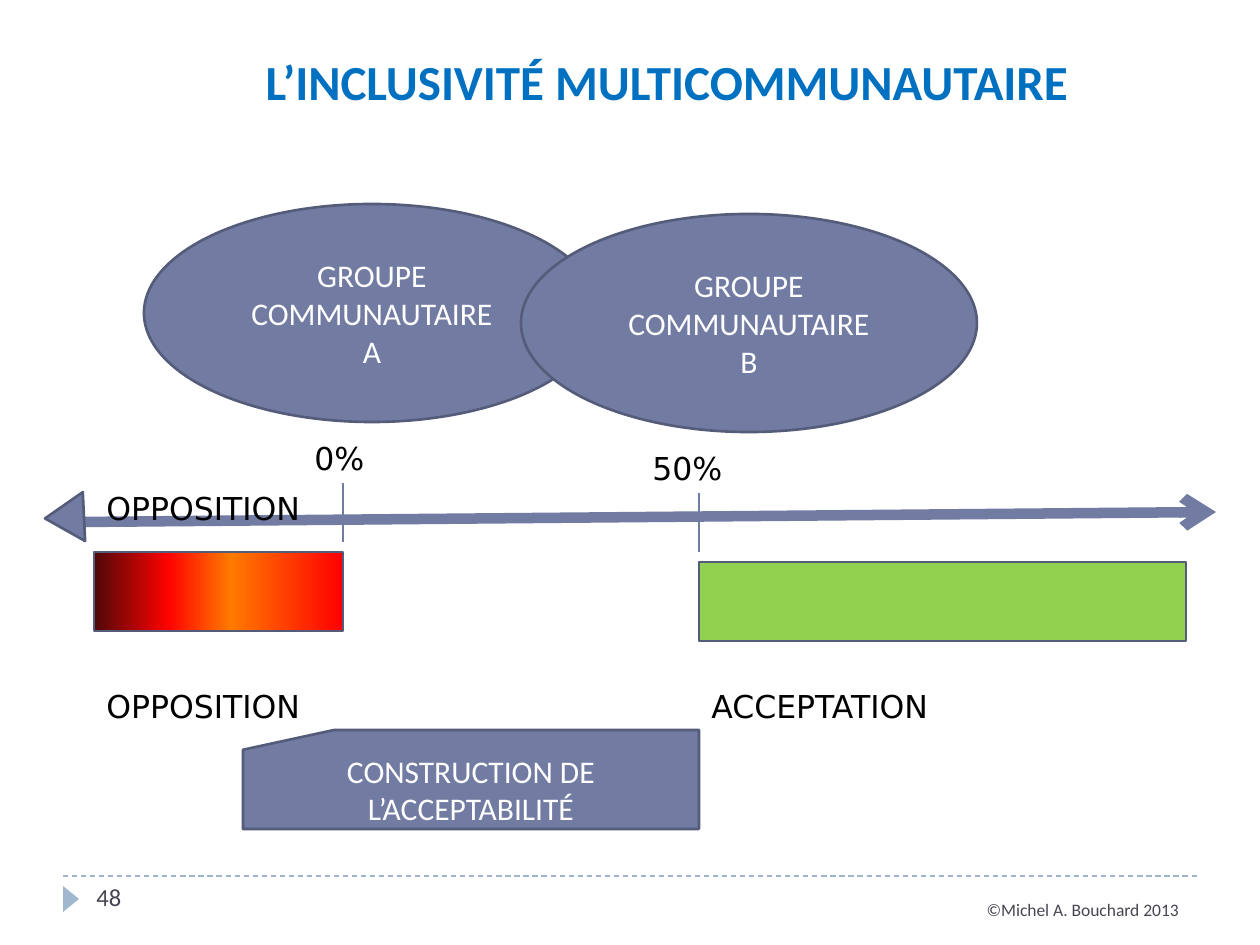
import pptx
import pptx.util
import pptx.dml.color
import pptx.enum.dml
import pptx.enum.shapes
import pptx.enum.text
import pptx.oxml
import pptx.oxml.ns
import lxml.etree

PX = 914400 / 126
BLUE, EDGE, PALE, GREY = "727CA3", "545C79", "9FB8CD", "464653"
SHAPE = pptx.enum.shapes.MSO_SHAPE
ALIGN = pptx.enum.text.PP_ALIGN
ANCHOR = pptx.enum.text.MSO_ANCHOR
qn = pptx.oxml.ns.qn


def px(*lengths):
    return [pptx.util.Emu(round(length * PX)) for length in lengths]


def rgb(colour):
    return pptx.dml.color.RGBColor.from_string(colour)


def write(shape, text, size=18, font="DejaVu Sans", colour="000000", bold=False,
          align=ALIGN.LEFT, anchor=ANCHOR.TOP, wrap=True):
    frame = shape.text_frame
    frame.word_wrap = wrap
    frame.vertical_anchor = anchor
    frame.text = text
    for paragraph in frame.paragraphs:
        paragraph.alignment = align
        paragraph.font.size = pptx.util.Pt(size)
        paragraph.font.name = font
        paragraph.font.bold = bold
        paragraph.font.color.rgb = rgb(colour)


prs = pptx.Presentation()
prs.slide_width, prs.slide_height = px(1260, 945)
slide = prs.slides.add_slide(prs.slide_layouts[5])
shapes = slide.shapes

# Title
title = shapes.title
title.left, title.top, title.width, title.height = px(253, 45, 833, 72)
write(title, "L’INCLUSIVITÉ MULTICOMMUNAUTAIRE", size=28, font="Calibri",
      colour="0070C0", bold=True, wrap=False)

# Footer rule, acceptance axis and its two ticks
for x1, y1, x2, y2, colour, weight, dash, head in [
    (63, 876, 1197, 876, PALE, 0.75, True, False),
    (84, 522, 1216, 512, BLUE, 6, False, True),
    (343, 483, 343, 542, BLUE, 0.75, False, False),
    (699, 493, 699, 552, BLUE, 0.75, False, False),
]:
    rule = shapes.add_connector(pptx.enum.shapes.MSO_CONNECTOR.STRAIGHT, *px(x1, y1, x2, y2))
    rule.line.color.rgb = rgb(colour)
    rule.line.width = pptx.util.Pt(weight)
    if dash:
        rule.line.dash_style = pptx.enum.dml.MSO_LINE.DASH
    if head:
        lxml.etree.SubElement(rule.line._get_or_add_ln(), qn("a:tailEnd"), type="arrow")
    lxml.etree.SubElement(rule._element.spPr, qn("a:effectLst"))

# Shapes: footer marker, left axis head, opposition and acceptance bars, groups, construction
for kind, box, turn, fill, edge, text in [
    (SHAPE.ISOSCELES_TRIANGLE, (58, 891, 26, 16), 90, PALE, None, ""),
    (SHAPE.ISOSCELES_TRIANGLE, (40, 498, 49, 39), 267.3, BLUE, EDGE, ""),
    (SHAPE.RECTANGLE, (94, 552, 249, 79), 0, None, EDGE, ""),
    (SHAPE.RECTANGLE, (699, 562, 487, 79), 0, "92D050", EDGE, ""),
    (SHAPE.OVAL, (144, 204, 456, 218), 0, BLUE, EDGE, "GROUPE COMMUNAUTAIRE\nA"),
    (SHAPE.OVAL, (521, 214, 456, 218), 0, BLUE, EDGE, "GROUPE COMMUNAUTAIRE\nB"),
    (SHAPE.FLOWCHART_CARD, (243, 730, 456, 99), 0, BLUE, EDGE,
     "CONSTRUCTION DE L’ACCEPTABILITÉ"),
]:
    part = shapes.add_shape(kind, *px(*box))
    part.rotation = turn
    part.shadow.inherit = False
    if fill:
        part.fill.solid()
        part.fill.fore_color.rgb = rgb(fill)
    else:
        # The opposition bar runs from dark red through orange to red
        part.fill.gradient()
        part.fill.gradient_angle = 0
        stops = part._element.spPr.find(qn("a:gradFill")).find(qn("a:gsLst"))
        for stop in list(stops):
            stops.remove(stop)
        for percent, colour in [(0, "4D0808"), (30, "FF0300"), (55, "FF7A00"), (100, "FF0000")]:
            stop = lxml.etree.SubElement(stops, qn("a:gs"), pos=str(percent * 1000))
            lxml.etree.SubElement(stop, qn("a:srgbClr"), val=colour)
    if edge:
        part.line.color.rgb = rgb(edge)
        part.line.width = pptx.util.Pt(1.5)
    else:
        part.line.fill.background()
    if text:
        write(part, text, font="Calibri", colour="FFFFFF",
              align=ALIGN.CENTER, anchor=ANCHOR.MIDDLE)

# Axis labels, slide number and credit
for box, text, style in [
    ((302, 433, 100, 51), "0%", {}),
    ((640, 443, 129, 51), "50%", {}),
    ((94, 483, 231, 51), "OPPOSITION", {"wrap": False}),
    ((94, 681, 231, 51), "OPPOSITION", {"wrap": False}),
    ((699, 681, 251, 51), "ACCEPTATION", {"wrap": False}),
    ((84, 876, 273, 50), "48", {"size": 14, "font": "Calibri", "colour": GREY}),
    ((958, 893, 233, 33), "©Michel A. Bouchard 2013",
     {"size": 10, "font": "Calibri", "colour": GREY, "align": ALIGN.RIGHT}),
]:
    write(shapes.add_textbox(*px(*box)), text, **style)

prs.save("out.pptx")
